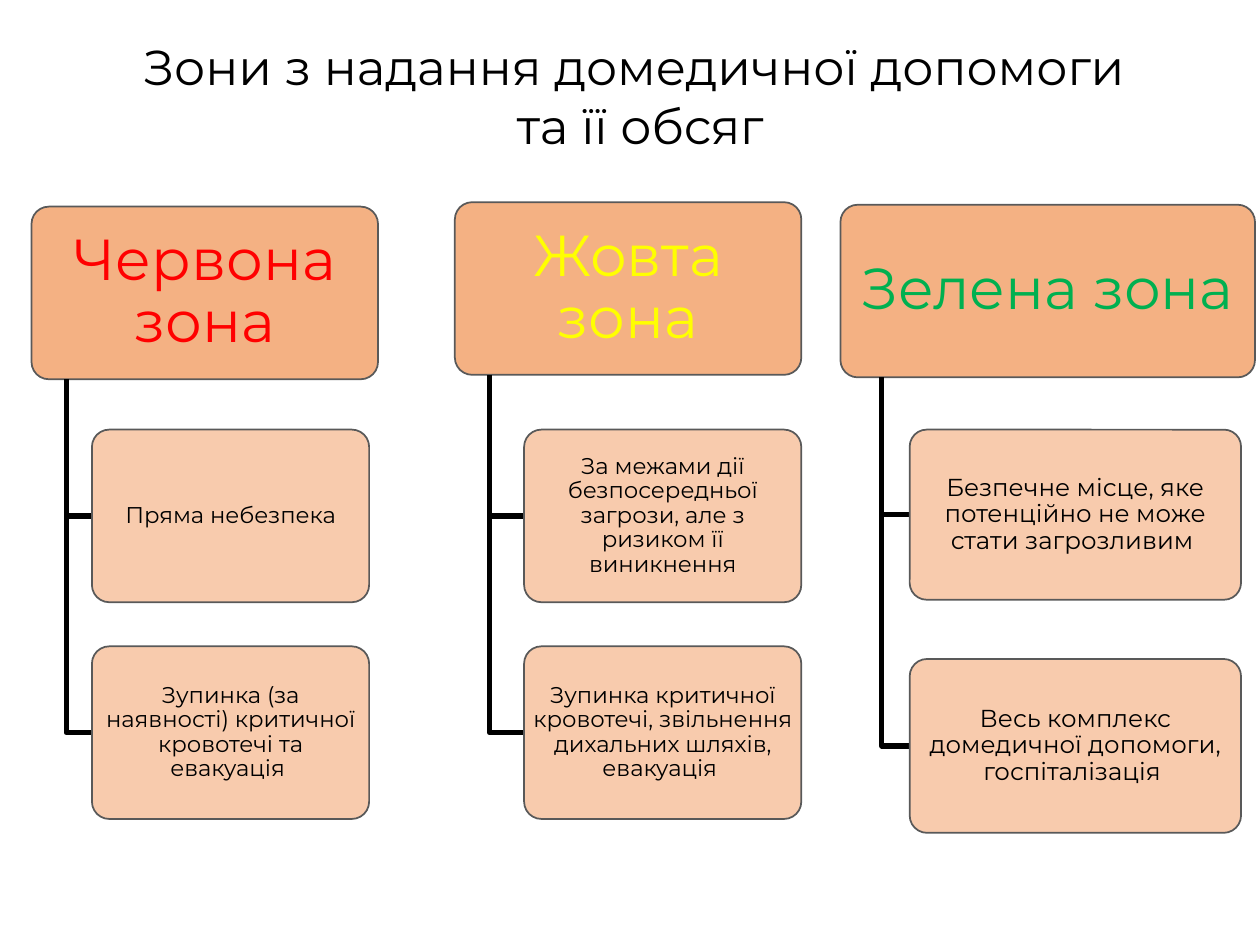
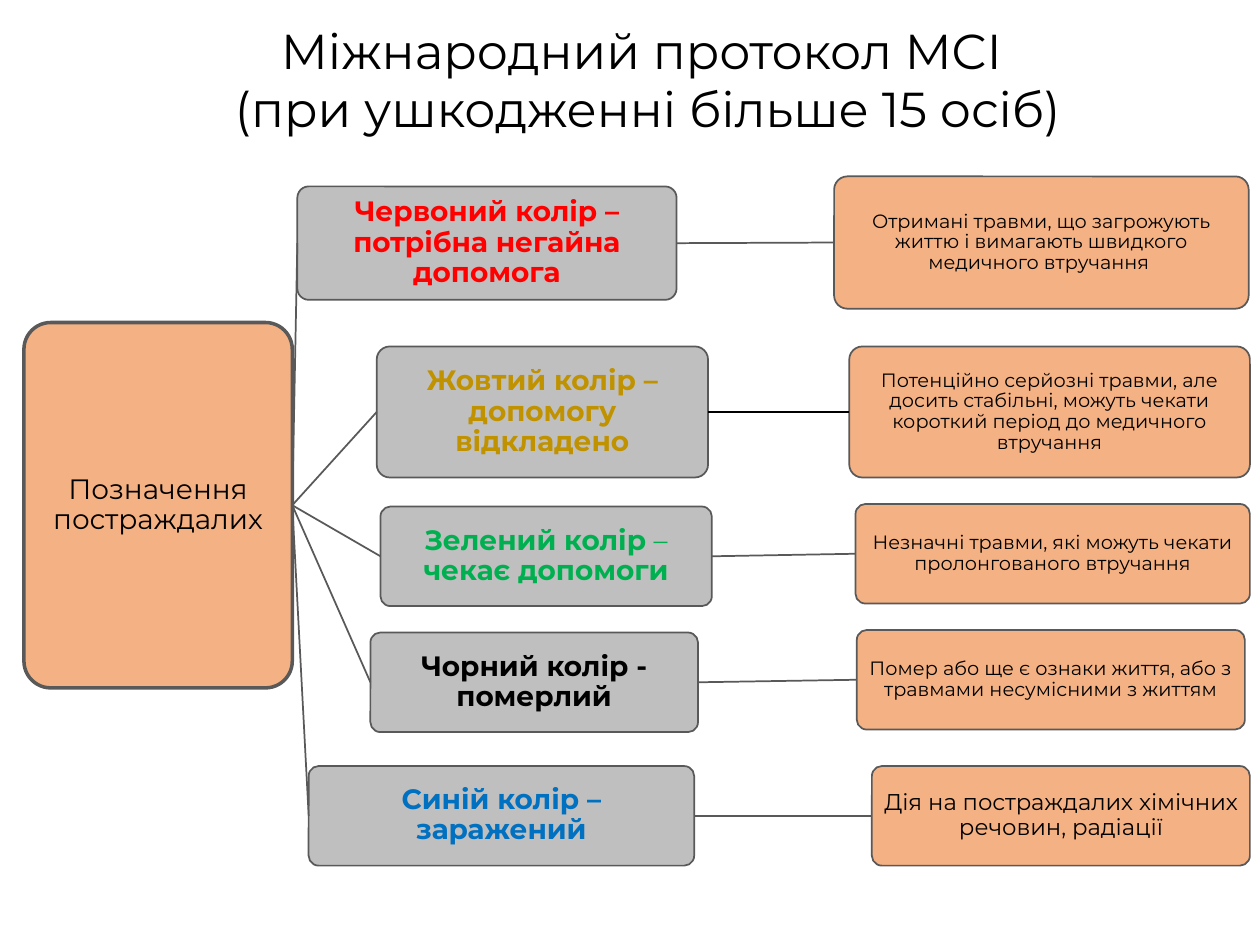
from typing import NamedTuple

import pptx
import pptx.dml.color
import pptx.enum.shapes
import pptx.enum.text
import pptx.oxml
import pptx.util

HUES = {
    "ink": "000000", "edge": "595959", "peach": "F4B183", "pale": "F8CBAD",
    "grey": "BFBFBF", "red": "FF0000", "yellow": "FFFF00", "gold": "C09200",
    "green": "00B050", "blue": "0070C0",
}
FONT = "Montserrat"
COLS = 100  # the slide is a grid of 100 columns by 75 rows of square cells
WIDE, HIGH = pptx.util.Inches(10), pptx.util.Inches(7.5)
CELL = WIDE / COLS


class Area(NamedTuple):
    """Left, top, width and height in grid cells."""
    col: float
    row: float
    wide: float
    high: float


class Look(NamedTuple):
    fill: str
    size: float
    pad: tuple[float, float]
    bold: bool = False
    edge: float = 1


class Zone(NamedTuple):
    name: str
    hue: str
    head: Area
    size: float
    items: list[tuple[Area, str]]


class Mark(NamedTuple):
    """A triage colour and the note that explains it."""
    text: str
    hue: str
    area: Area
    note: str
    spot: Area
    size: float = 11
    link: str = "edge"


HEAD = Look("peach", 33, (0.7, 0.5))
ITEM = Look("pale", 13, (0.3, 0.2))
ROOT = Look("peach", 16, (0.1, 0.1), edge=2)
MARK = Look("grey", 16, (0.1, 0.1), bold=True)
NOTE = Look("peach", 11, (0.1, 0.1))

ZONES = [
    Zone("Червона зона", "red", Area(2.5, 16.4, 27.5, 13.7), 13, [
        (Area(7.3, 34.1, 22, 13.7), "Пряма небезпека"),
        (Area(7.3, 51.3, 22, 13.7),
         "Зупинка (за наявності) критичної кровотечі та евакуація "),
    ]),
    Zone("Жовта зона", "yellow", Area(36.1, 16.05, 27.5, 13.7), 13, [
        (Area(41.6, 34.1, 22, 13.7),
         "За межами дії безпосередньої загрози, але з ризиком її виникнення"),
        (Area(41.6, 51.3, 22, 13.7),
         "Зупинка критичної кровотечі, звільнення дихальних шляхів, евакуація "),
    ]),
    Zone("Зелена зона", "green", Area(66.7, 16.25, 32.9, 13.7), 14, [
        (Area(72.2, 34.1, 26.3, 13.5),
         "Безпечне місце, яке потенційно не може стати загрозливим "),
        (Area(72.2, 52.3, 26.3, 13.8),
         "Весь комплекс домедичної допомоги, госпіталізація "),
    ]),
]

# Bars set apart the plain part of a bold label.
MARKS = [
    Mark("Червоний колір – потрібна негайна допомога", "red",
         Area(23.6, 14.8, 30.1, 9),
         "Отримані травми, що загрожують життю і вимагають швидкого "
         "медичного втручання ", Area(66.2, 14, 32.9, 10.5)),
    Mark("Жовтий колір – допомогу відкладено", "gold",
         Area(29.9, 27.5, 26.3, 10.4),
         "Потенційно серйозні травми, але досить стабільні, можуть чекати "
         "короткий період до медичного втручання",
         Area(67.4, 27.5, 31.8, 10.4), link="ink"),
    Mark("Зелений колір| – |чекає допомоги", "green",
         Area(30.2, 40.2, 26.3, 7.9),
         "Незначні травми, які можуть чекати пролонгованого втручання",
         Area(67.9, 40, 31.3, 7.9)),
    Mark("Чорний колір - померлий", "ink", Area(29.4, 50.2, 26, 7.9),
         "Помер або ще є ознаки життя, або з травмами несумісними з життям",
         Area(68, 50, 30.8, 7.9)),
    Mark("Синій колір – заражений", "blue", Area(24.5, 60.8, 30.6, 7.9),
         "Дія на постраждалих хімічних речовин, радіації",
         Area(69.2, 60.8, 30, 7.9), size=13),
]


def cells(num: float) -> pptx.util.Emu:
    return pptx.util.Emu(round(num * CELL))


def tint(name: str) -> pptx.dml.color.RGBColor:
    return pptx.dml.color.RGBColor.from_string(HUES[name])


def style(run, size: float, hue: str, bold: bool = False) -> None:
    run.font.name = FONT
    run.font.size = pptx.util.Pt(size)
    run.font.bold = bold
    run.font.color.rgb = tint(hue)


def stroke(line, hue: str, width: float) -> None:
    line.color.rgb = tint(hue)
    line.width = pptx.util.Pt(width)


def title(slide, area: Area, text: str) -> None:
    box = slide.shapes.add_textbox(*map(cells, area))
    frame = box.text_frame
    frame.word_wrap = False
    frame.auto_size = pptx.enum.text.MSO_AUTO_SIZE.SHAPE_TO_FIT_TEXT
    frame.text = text
    for para in frame.paragraphs:
        para.alignment = pptx.enum.text.PP_ALIGN.CENTER
        for run in para.runs:
            style(run, 28, "ink")


def card(slide, area: Area, look: Look, text: str, hue: str = "ink"):
    """Draw a rounded box with centred text."""
    box = slide.shapes.add_shape(
        pptx.enum.shapes.MSO_SHAPE.ROUNDED_RECTANGLE, *map(cells, area))
    box.adjustments[0] = 0.1
    box.shadow.inherit = False
    box.fill.solid()
    box.fill.fore_color.rgb = tint(look.fill)
    stroke(box.line, "edge", look.edge)
    frame = box.text_frame
    frame.word_wrap = True
    frame.vertical_anchor = pptx.enum.text.MSO_ANCHOR.MIDDLE
    frame.margin_left = frame.margin_right = cells(look.pad[0])
    frame.margin_top = frame.margin_bottom = cells(look.pad[1])
    para = frame.paragraphs[0]
    para.alignment = pptx.enum.text.PP_ALIGN.CENTER
    para.line_spacing = 0.9
    for num, part in enumerate(text.split("|")):
        run = para.add_run()
        run.text = part
        style(run, look.size, hue, look.bold and num % 2 == 0)
    return box


def elbow(slide, head: Area, item: Area) -> None:
    """Lead from a tenth of the head's lower edge to the item's left side."""
    left = cells(head.col + head.wide / 10)
    mid = cells(item.row + item.high / 2)
    pen = slide.shapes.build_freeform(left, cells(head.row + head.high))
    pen.add_line_segments([(left, mid), (cells(item.col), mid)], close=False)
    bend = pen.convert_to_shape()
    bend.shadow.inherit = False
    bend.fill.background()
    stroke(bend.line, "ink", 3)


def join(slide, start, end, hue: str = "edge") -> None:
    """Link the right side of one box to the left side of another."""
    line = slide.shapes.add_connector(
        pptx.enum.shapes.MSO_CONNECTOR.STRAIGHT, 0, 0, 0, 0)
    line.begin_connect(start, 3)
    line.end_connect(end, 1)
    stroke(line.line, hue, 1)
    props = line._element.spPr
    props.append(pptx.oxml.parse_xml(
        '<a:effectLst xmlns:a='
        '"http://schemas.openxmlformats.org/drawingml/2006/main"/>'))


def draw_zones(slide) -> None:
    title(slide, Area(6.9, 2.4, 87.8, 10.4),
          "Зони з надання домедичної допомоги \nта її обсяг")
    for zone in ZONES:
        card(slide, zone.head, HEAD, zone.name, zone.hue)
        for area, text in zone.items:
            elbow(slide, zone.head, area)
            card(slide, area, ITEM._replace(size=zone.size), text)


def draw_marks(slide) -> None:
    title(slide, Area(13.8, 1.1, 75.2, 10.4),
          "Міжнародний протокол MCI \v(при ушкодженні більше 15 осіб)")
    root = card(slide, Area(1.9, 25.6, 21.3, 29), ROOT,
                "Позначення постраждалих")
    for mark in MARKS:
        label = card(slide, mark.area, MARK, mark.text, mark.hue)
        note = card(slide, mark.spot, NOTE._replace(size=mark.size), mark.note)
        join(slide, root, label)
        join(slide, label, note, mark.link)


def main() -> None:
    deck = pptx.Presentation()
    deck.slide_width, deck.slide_height = WIDE, HIGH
    for draw in (draw_zones, draw_marks):
        draw(deck.slides.add_slide(deck.slide_layouts[6]))
    deck.save("out.pptx")


if __name__ == "__main__":
    main()
